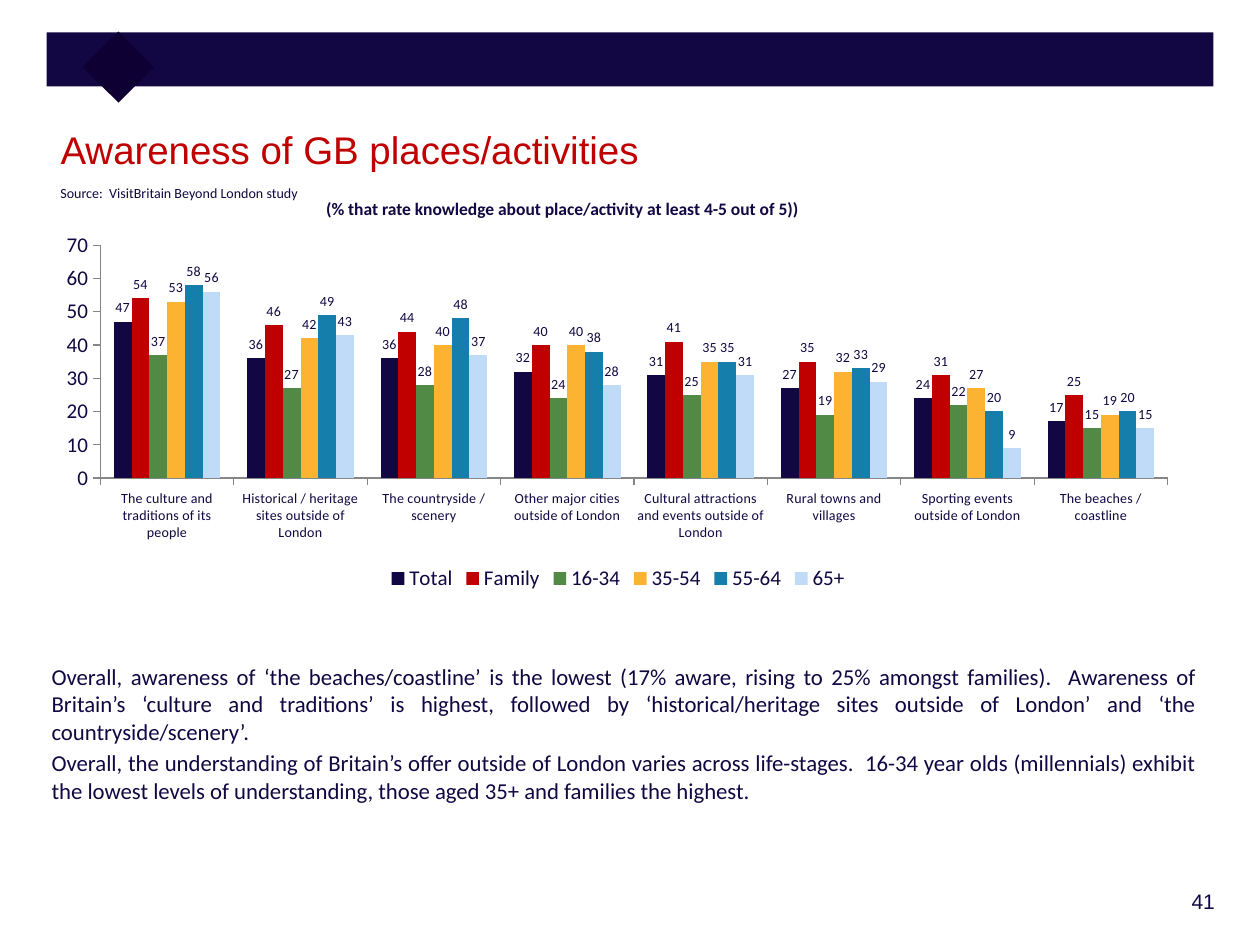
from lxml import etree
from pptx import Presentation, util as u
from pptx.chart.data import CategoryChartData
from pptx.dml.color import RGBColor
from pptx.enum import chart as charts, shapes, text
from pptx.oxml.ns import qn

Pt = u.Pt
NAVY = RGBColor(0x12, 0x07, 0x42)
DARK_NAVY = RGBColor(0x0E, 0x00, 0x33)
RED = RGBColor(0xC0, 0x00, 0x00)
GREEN = RGBColor(0x51, 0x8A, 0x45)
AMBER = RGBColor(0xFD, 0xB3, 0x32)
BLUE = RGBColor(0x15, 0x7E, 0xAB)
PALE_BLUE = RGBColor(0xBF, 0xDB, 0xF7)
AXIS_GREY = RGBColor(0x86, 0x86, 0x86)

CATEGORIES = [
    "The culture and traditions of its people",
    "Historical / heritage sites outside of London",
    "The countryside / scenery",
    "Other major cities outside of London",
    "Cultural attractions and events outside of London",
    "Rural towns and villages",
    "Sporting events outside of London",
    "The beaches / coastline",
]
SERIES = [
    ("Total", NAVY, (47, 36, 36, 32, 31, 27, 24, 17)),
    ("Family", RED, (54, 46, 44, 40, 41, 35, 31, 25)),
    ("16-34", GREEN, (37, 27, 28, 24, 25, 19, 22, 15)),
    ("35-54", AMBER, (53, 42, 40, 40, 35, 32, 27, 19)),
    ("55-64", BLUE, (58, 49, 48, 38, 35, 33, 20, 20)),
    ("65+", PALE_BLUE, (56, 43, 37, 28, 31, 29, 9, 15)),
]
COMMENTS = [
    "Overall, awareness of ‘the beaches/coastline’ is the lowest (17% aware, rising to 25% "
    "amongst families).  Awareness of Britain’s ‘culture and traditions’ is highest, followed "
    "by ‘historical/heritage sites outside of London’ and ‘the countryside/scenery’.",
    "Overall, the understanding of Britain’s offer outside of London varies across life-stages.  "
    "16-34 year olds (millennials) exhibit the lowest levels of understanding, those aged 35+ "
    "and families the highest.",
]


def format_font(font, size, color=NAVY, name="Calibri", bold=False):
    font.size = Pt(size)
    font.name = name
    font.bold = bold
    font.color.rgb = color


def write_text(box, lines, size, align=text.PP_ALIGN.LEFT, wrap=True, gap=0,
               inset_left=7.2, **font_format):
    frame = box.text_frame
    frame.word_wrap = wrap
    frame.auto_size = text.MSO_AUTO_SIZE.NONE
    frame.vertical_anchor = text.MSO_ANCHOR.TOP
    frame.margin_left = Pt(inset_left)
    for index, line in enumerate(lines):
        para = frame.add_paragraph() if index else frame.paragraphs[0]
        para.alignment = align
        para.space_before = Pt(gap if index else 0)
        span = para.add_run()
        span.text = line
        format_font(span.font, size, **font_format)


def add_text(page, place, lines, size, **options):
    box = page.shapes.add_textbox(*map(Pt, place))
    write_text(box, lines, size, **options)


def add_block(page, place, color, rotation=0):
    block = page.shapes.add_shape(shapes.MSO_SHAPE.RECTANGLE, *map(Pt, place))
    block.shadow.inherit = False
    block.fill.solid()
    block.fill.fore_color.rgb = color
    block.line.fill.background()
    block.rotation = rotation


def place_plot(chart, x, y, w, h):
    """Fix the inner plot area, as fractions of the chart."""
    area = chart.element.find(".//" + qn("c:plotArea"))
    for old in area.findall(qn("c:layout")):
        area.remove(old)
    layout = etree.Element(qn("c:layout"))
    manual = etree.SubElement(layout, qn("c:manualLayout"))
    settings = {"layoutTarget": "inner", "xMode": "edge", "yMode": "edge",
                "x": x, "y": y, "w": w, "h": h}
    for tag, value in settings.items():
        etree.SubElement(manual, qn("c:" + tag)).set("val", str(value))
    area.insert(0, layout)


def format_axis(axis, size):
    axis.has_major_gridlines = False
    axis.major_tick_mark = charts.XL_TICK_MARK.OUTSIDE
    axis.minor_tick_mark = charts.XL_TICK_MARK.NONE
    axis.format.line.color.rgb = AXIS_GREY
    format_font(axis.tick_labels.font, size)


def add_awareness_chart(page, place):
    data = CategoryChartData()
    data.categories = CATEGORIES
    for name, _, values in SERIES:
        data.add_series(name, values)
    kind = charts.XL_CHART_TYPE.COLUMN_CLUSTERED
    chart = page.shapes.add_chart(kind, *map(Pt, place), data).chart
    format_font(chart.font, 18)
    chart.has_title = False
    chart.has_legend = True
    chart.legend.position = charts.XL_LEGEND_POSITION.BOTTOM
    chart.legend.include_in_layout = False
    format_font(chart.legend.font, 12)

    format_axis(chart.category_axis, 8)
    format_axis(chart.value_axis, 12)
    chart.value_axis.minimum_scale = 0
    chart.value_axis.maximum_scale = 70
    chart.value_axis.major_unit = 10

    plot = chart.plots[0]
    plot.gap_width = 150
    plot.overlap = 0
    plot.vary_by_categories = False
    for series, (_, color, _) in zip(plot.series, SERIES):
        series.format.fill.solid()
        series.format.fill.fore_color.rgb = color
        labels = series.data_labels
        labels.show_value = True
        labels.position = charts.XL_LABEL_POSITION.OUTSIDE_END
        format_font(labels.font, 8)
    place_plot(chart, 0.046, 0.116, 0.936, 0.587)


def main():
    deck = Presentation()
    deck.slide_width, deck.slide_height = Pt(720), Pt(540)
    page = deck.slides.add_slide(deck.slide_layouts[5])

    add_block(page, (26.6, 18.5, 666.8, 30.8), NAVY)
    add_block(page, (53.3, 24, 28.8, 28.8), DARK_NAVY, rotation=45)

    title = page.shapes.title
    title.left, title.top, title.width, title.height = map(Pt, (27.4, 68.4, 641.5, 64))
    write_text(title, ["Awareness of GB places/activities"], 22, color=RED, name="Arial")

    add_awareness_chart(page, (27.4, 113.8, 651.6, 226.8))
    add_text(page, (27.4, 102.2, 152, 17.3), ["Source:  VisitBritain Beyond London study"], 8,
             wrap=False)
    add_text(page, (179.3, 109.4, 450.7, 19.4),
             ["(% that rate knowledge about place/activity at least 4-5 out of 5))"], 10, bold=True)
    add_text(page, (26.6, 375.1, 663.1, 108.7), COMMENTS, 13,
             align=text.PP_ALIGN.JUSTIFY, gap=2.6, inset_left=2.9)
    add_text(page, (614.2, 504, 87.1, 25.9), ["41"], 12,
             align=text.PP_ALIGN.RIGHT, name="Arial")
    deck.save("out.pptx")


if __name__ == "__main__":
    main()
